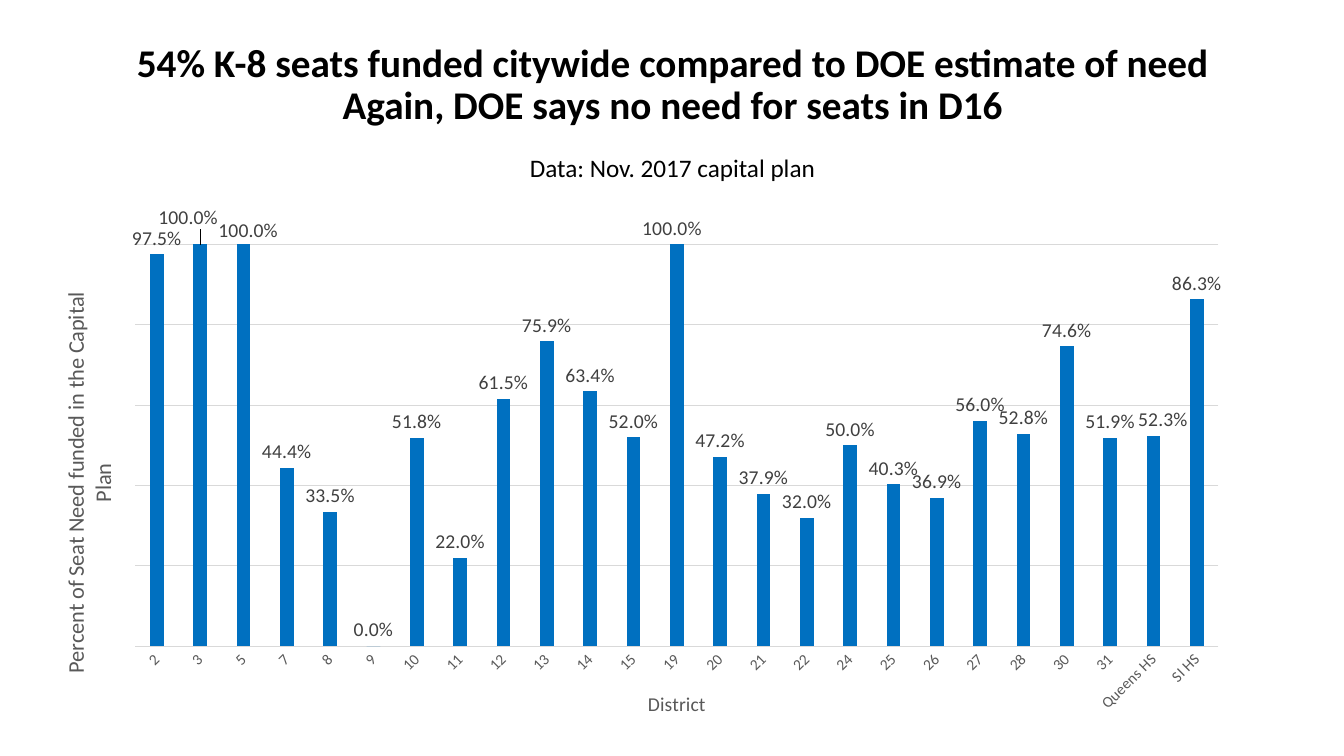
"""Build a slide with a column chart of funded school seats by district."""
import lxml.etree
import pptx
import pptx.chart.data
import pptx.dml.color
import pptx.enum.chart
import pptx.enum.text
import pptx.oxml.ns
import pptx.util

EMU_PER_PX = 9144
FONT = "Calibri"
FUNDED_SHARES = {
    "2": 0.975, "3": 1, "5": 1, "7": 0.444, "8": 0.335, "9": 0, "10": 0.518,
    "11": 0.22, "12": 0.615, "13": 0.759, "14": 0.634, "15": 0.52, "19": 1,
    "20": 0.472, "21": 0.379, "22": 0.32, "24": 0.5, "25": 0.403, "26": 0.369,
    "27": 0.56, "28": 0.528, "30": 0.746, "31": 0.519, "Queens HS": 0.523,
    "SI HS": 0.863,
}
LABEL_SHIFTS = {"3": (-0.01, -0.02), "5": (0.004, 0.005),
                "19": (-0.004, 0), "Queens HS": (0.008, 0)}


def px(length):
    """Turn pixels into EMU."""
    return pptx.util.Emu(length * EMU_PER_PX)


def color(hex_string):
    """Turn a hex string into a colour."""
    return pptx.dml.color.RGBColor.from_string(hex_string)


def set_font(font, size, hex_string, bold=False):
    """Apply the slide's typeface with a size, colour and weight."""
    font.name = FONT
    font.size = pptx.util.Pt(size)
    font.bold = bold
    font.color.rgb = color(hex_string)


def set_line(line, hex_string):
    """Draw a thin line in one colour."""
    line.color.rgb = color(hex_string)
    line.width = pptx.util.Pt(0.75)


def set_layout(parent, index, **settings):
    """Give a chart part a manual layout at its place among its siblings."""
    name = pptx.oxml.ns.qn
    for old_layout in parent.findall(name("c:layout")):
        parent.remove(old_layout)
    layout = lxml.etree.Element(name("c:layout"))
    manual = lxml.etree.SubElement(layout, name("c:manualLayout"))
    for key, value in settings.items():
        lxml.etree.SubElement(manual, name("c:" + key)).set("val", str(value))
    parent.insert(index, layout)


def add_title(slide):
    """Fill the title placeholder with the heading and the data source."""
    title = slide.shapes.title
    title.left, title.top, title.width, title.height = map(px, (92, 38, 1150, 149))
    title.fill.solid()
    title.fill.fore_color.rgb = color("FFFFFF")
    frame = title.text_frame
    frame.word_wrap = True
    frame.vertical_anchor = pptx.enum.text.MSO_ANCHOR.MIDDLE
    frame.text = ("54% K-8 seats funded citywide compared to DOE estimate of need\n"
                  "Again, DOE says no need for seats in D16\n"
                  "Data: Nov. 2017 capital plan")
    for paragraph in frame.paragraphs:
        paragraph.alignment = pptx.enum.text.PP_ALIGN.CENTER
        paragraph.line_spacing = 0.9
        paragraph.space_before = pptx.util.Pt(0)
        set_font(paragraph.font, 28, "000000", bold=True)
    set_font(paragraph.font, 18, "000000")
    paragraph.space_before = pptx.util.Pt(20)


def add_axis_title(axis, text, size):
    """Name an axis."""
    frame = axis.axis_title.text_frame
    frame.text = text
    set_font(frame.paragraphs[0].font, size, "595959")


def format_axes(chart):
    """Style the district axis and the hidden percent axis."""
    districts, percents = chart.category_axis, chart.value_axis
    districts.major_tick_mark = pptx.enum.chart.XL_TICK_MARK.NONE
    set_font(districts.tick_labels.font, 11, "595959")
    districts.tick_labels.font._element.getparent().getparent().getparent().find(
        pptx.oxml.ns.qn("a:bodyPr")).set("rot", "-2700000")
    set_line(districts.format.line, "D9D9D9")
    add_axis_title(districts, "District", 14)

    percents.visible = False
    percents.minimum_scale, percents.maximum_scale = 0, 1
    percents.major_unit = 0.2
    percents.tick_labels.number_format = "0.0%"
    percents.tick_labels.number_format_is_linked = False
    set_line(percents.major_gridlines.format.line, "D9D9D9")
    add_axis_title(percents, "Percent of Seat Need funded in the Capital Plan", 16)
    set_layout(percents.axis_title._element, 1,
               xMode="edge", yMode="edge", x=0.015, y=0.18)


def format_labels(plot):
    """Show values above the columns and move the crowded ones."""
    position = pptx.enum.chart.XL_LABEL_POSITION.OUTSIDE_END
    series = plot.series[0]
    labels = series.data_labels
    labels.show_value = True
    labels.number_format = "0.0%"
    labels.number_format_is_linked = False
    labels.position = position
    set_font(labels.font, 14, "404040")
    districts = list(FUNDED_SHARES)
    for district, (shift_x, shift_y) in LABEL_SHIFTS.items():
        label = series.points[districts.index(district)].data_label
        label.position = position
        set_font(label.font, 14, "404040")
        set_layout(label.font._element.xpath("ancestor::c:dLbl")[0], 1,
                   x=shift_x, y=shift_y)


def add_seat_chart(slide):
    """Add the chart of funded seats."""
    data = pptx.chart.data.CategoryChartData(number_format="0.0%")
    data.categories = list(FUNDED_SHARES)
    data.add_series("Series 1", list(FUNDED_SHARES.values()))
    chart = slide.shapes.add_chart(
        pptx.enum.chart.XL_CHART_TYPE.COLUMN_CLUSTERED,
        *map(px, (38, 191, 1186, 526)), data).chart
    chart.has_legend = False
    chart.has_title = False
    set_font(chart.font, 10, "000000")
    plot = chart.plots[0]
    plot.vary_by_categories = False
    plot.gap_width, plot.overlap = 219, -27
    fill = plot.series[0].format.fill
    fill.solid()
    fill.fore_color.rgb = color("0070C0")
    format_axes(chart)
    format_labels(plot)
    set_layout(chart._chartSpace.chart.plotArea, 0, layoutTarget="inner",
               xMode="edge", yMode="edge", x=0.081, y=0.098, w=0.906, h=0.758)


def main():
    """Build and save the presentation."""
    presentation = pptx.Presentation()
    presentation.slide_width, presentation.slide_height = px(1333), px(750)
    slide = presentation.slides.add_slide(presentation.slide_layouts[5])
    add_seat_chart(slide)
    add_title(slide)
    presentation.save("out.pptx")


if __name__ == "__main__":
    main()
